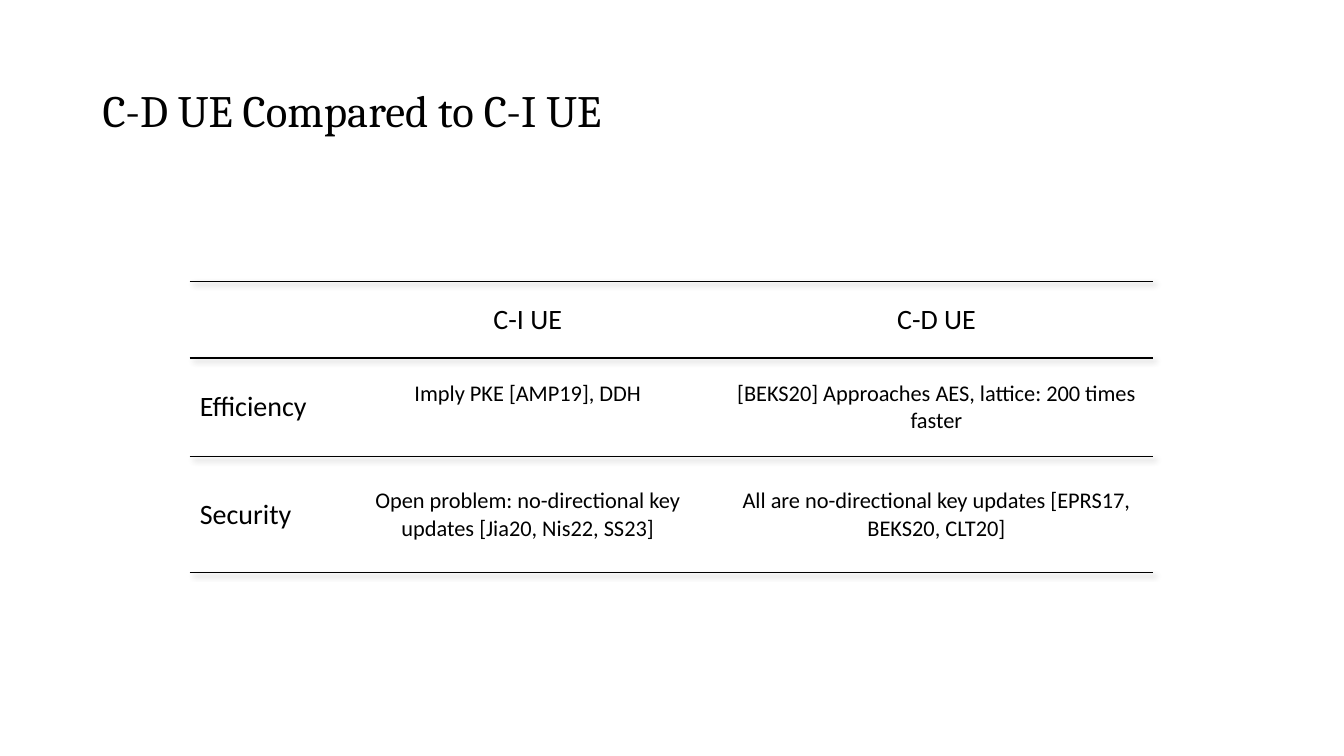
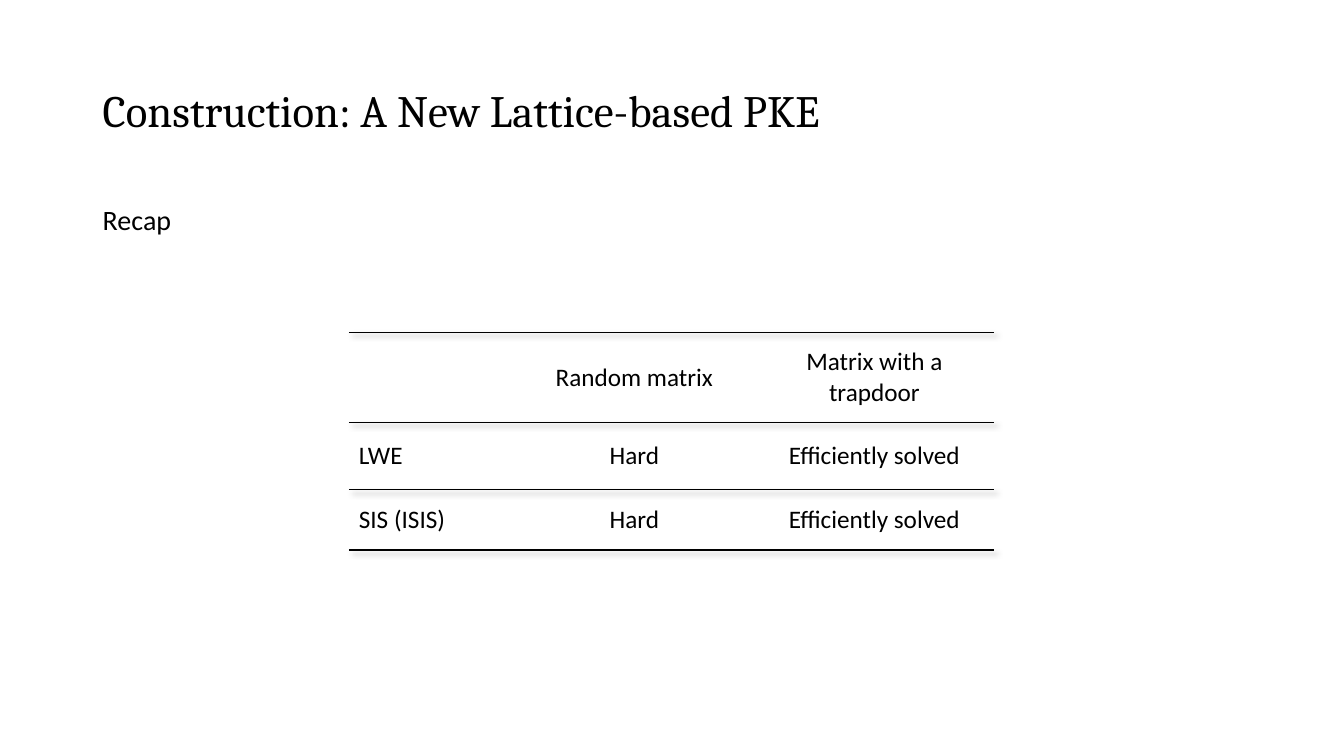
import pptx
import pptx.dml.color
import pptx.enum.text
import pptx.oxml
import pptx.oxml.ns
import pptx.util

Cm = pptx.util.Cm
ALIGN = pptx.enum.text.PP_ALIGN
ANCHOR = pptx.enum.text.MSO_ANCHOR

COLORS = {"text": "000000", "rule": "000000", "shadow": "000000"}
HEADING_FONT, BODY_FONT = "Cambria", "Calibri"
NAMESPACE = pptx.oxml.ns.nsdecls("a")
PLAIN_TABLE_STYLE = "{2D5ABB26-0587-4C30-8999-92F81FD0307C}"
LEFT, WIDTH = Cm(2.34), Cm(29.21)

SLIDES = [
    {
        "title": "C-D UE Compared to C-I UE",
        "body": None,
        "corner": (4.78, 7.09),
        "columns": [3.68, 9.68, 10.92],
        "rows": [1.93, 2.49, 2.92],
        "label_size": 20,
        "value_size": 16,
        "top_aligned": {(1, 1): 0.56},
        "cells": [
            ["", "C-I UE", "C-D UE"],
            ["Efficiency", "Imply PKE [AMP19], DDH",
             "[BEKS20] Approaches AES, lattice: 200 times faster"],
            ["Security", "Open problem: no-directional key updates [Jia20, Nis22, SS23]",
             "All are no-directional key updates [EPRS17, BEKS20, CLT20]"],
        ],
    },
    {
        "title": "Construction: A New Lattice-based PKE",
        "body": "Recap",
        "corner": (8.79, 8.38),
        "columns": [4.17, 6.05, 6.05],
        "rows": [2.26, 1.7, 1.52],
        "label_size": 18,
        "value_size": 18,
        "top_aligned": {},
        "cells": [
            ["", "Random matrix", "Matrix with a trapdoor"],
            ["LWE", "Hard", "Efficiently solved"],
            ["SIS (ISIS)", "Hard", "Efficiently solved"],
        ],
    },
]


def write(paragraph, text, font_name, size):
    run = paragraph.add_run()
    run.text = text
    run.font.name = font_name
    run.font.size = pptx.util.Pt(size)
    run.font.color.rgb = pptx.dml.color.RGBColor.from_string(COLORS["text"])


def add_text(slide, top, height, anchor, text, font_name, size):
    box = slide.shapes.add_textbox(LEFT, top, WIDTH, height)
    box.text_frame.word_wrap = True
    box.text_frame.vertical_anchor = anchor
    paragraph = box.text_frame.paragraphs[0]
    paragraph.line_spacing = 0.9
    write(paragraph, text, font_name, size)


presentation = pptx.Presentation()
presentation.slide_width = Cm(33.87)
presentation.slide_height = Cm(19.05)

for content in SLIDES:
    slide = presentation.slides.add_slide(presentation.slide_layouts[6])

    # Title and body text
    add_text(slide, Cm(1.02), Cm(3.68), ANCHOR.MIDDLE, content["title"], HEADING_FONT, 32)
    if content["body"]:
        add_text(slide, Cm(5.08), Cm(12.09), ANCHOR.TOP, content["body"], BODY_FONT, 20)

    # Table grid
    columns, rows = content["columns"], content["rows"]
    left, top = content["corner"]
    table = slide.shapes.add_table(len(rows), len(columns), Cm(left), Cm(top),
                                   Cm(sum(columns)), Cm(sum(rows))).table
    table.first_row = False
    table.horz_banding = False
    for column, width in zip(table.columns, columns):
        column.width = Cm(width)
    for row, height in zip(table.rows, rows):
        row.height = Cm(height)

    # Plain style with a soft shadow under the rules
    properties = table._tbl.tblPr
    properties.find(pptx.oxml.ns.qn("a:tableStyleId")).text = PLAIN_TABLE_STYLE
    properties.insert(0, pptx.oxml.parse_xml(
        f'<a:effectLst {NAMESPACE}><a:outerShdw blurRad="50800" dist="38100" dir="2700000">'
        f'<a:srgbClr val="{COLORS["shadow"]}"><a:alpha val="40000"/></a:srgbClr>'
        '</a:outerShdw></a:effectLst>'))

    # Cells: text, then rules around the header and below the last row
    for r, texts in enumerate(content["cells"]):
        edges = {0: ["lnB", "lnT"], 1: ["lnT"], len(rows) - 1: ["lnB"]}.get(r, [])
        for c, text in enumerate(texts):
            cell = table.cell(r, c)
            cell.fill.background()
            cell.vertical_anchor = ANCHOR.MIDDLE
            if (r, c) in content["top_aligned"]:
                cell.vertical_anchor = ANCHOR.TOP
                cell.margin_top = Cm(content["top_aligned"][r, c])
            if text:
                paragraph = cell.text_frame.paragraphs[0]
                paragraph.alignment = ALIGN.CENTER if c else ALIGN.LEFT
                is_label = r == 0 or c == 0
                size = content["label_size" if is_label else "value_size"]
                write(paragraph, text, BODY_FONT, size)
            for edge in edges:
                cell._tc.get_or_add_tcPr().insert(0, pptx.oxml.parse_xml(
                    f'<a:{edge} {NAMESPACE} w="12700"><a:solidFill>'
                    f'<a:srgbClr val="{COLORS["rule"]}"/></a:solidFill></a:{edge}>'))

presentation.save("out.pptx")
